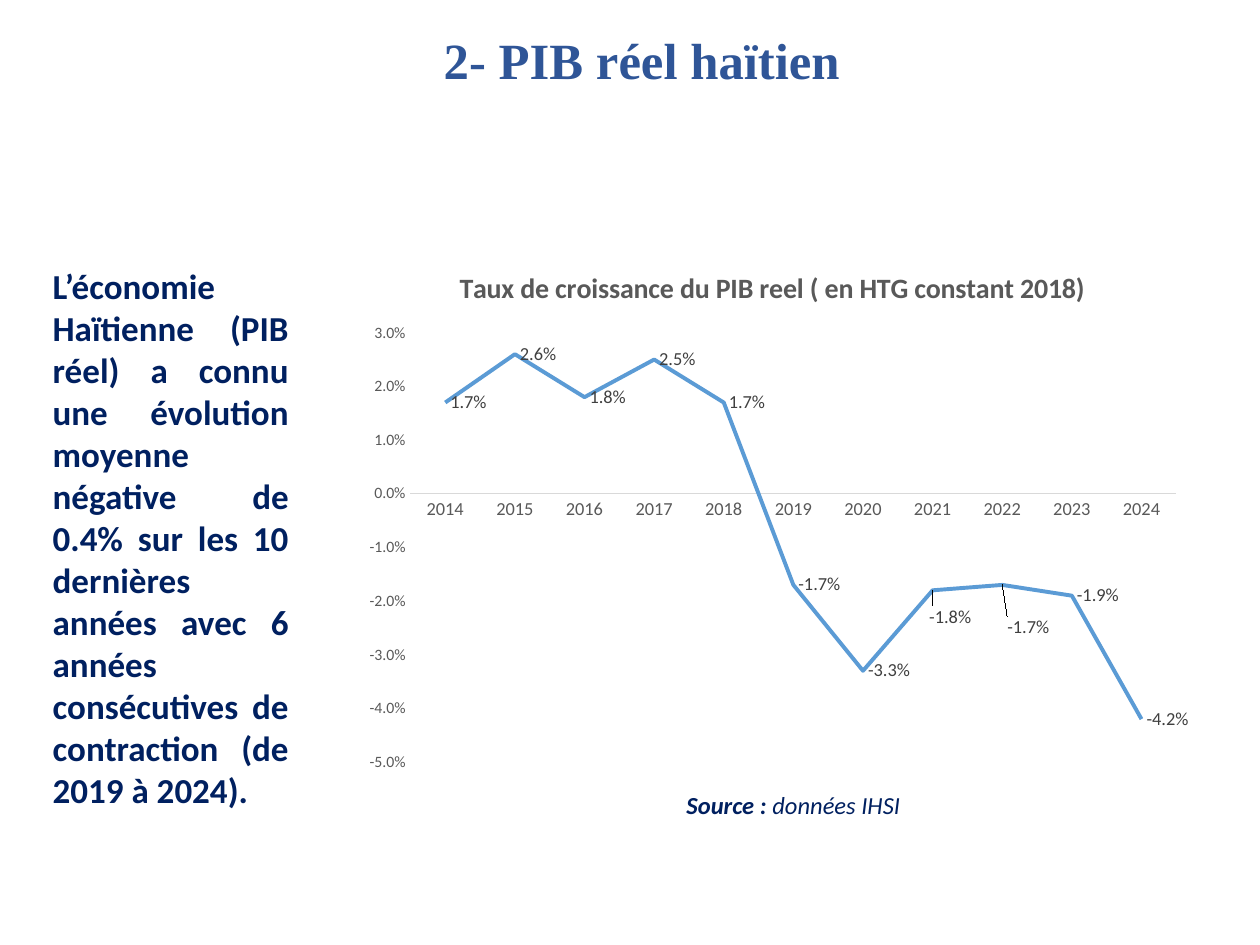
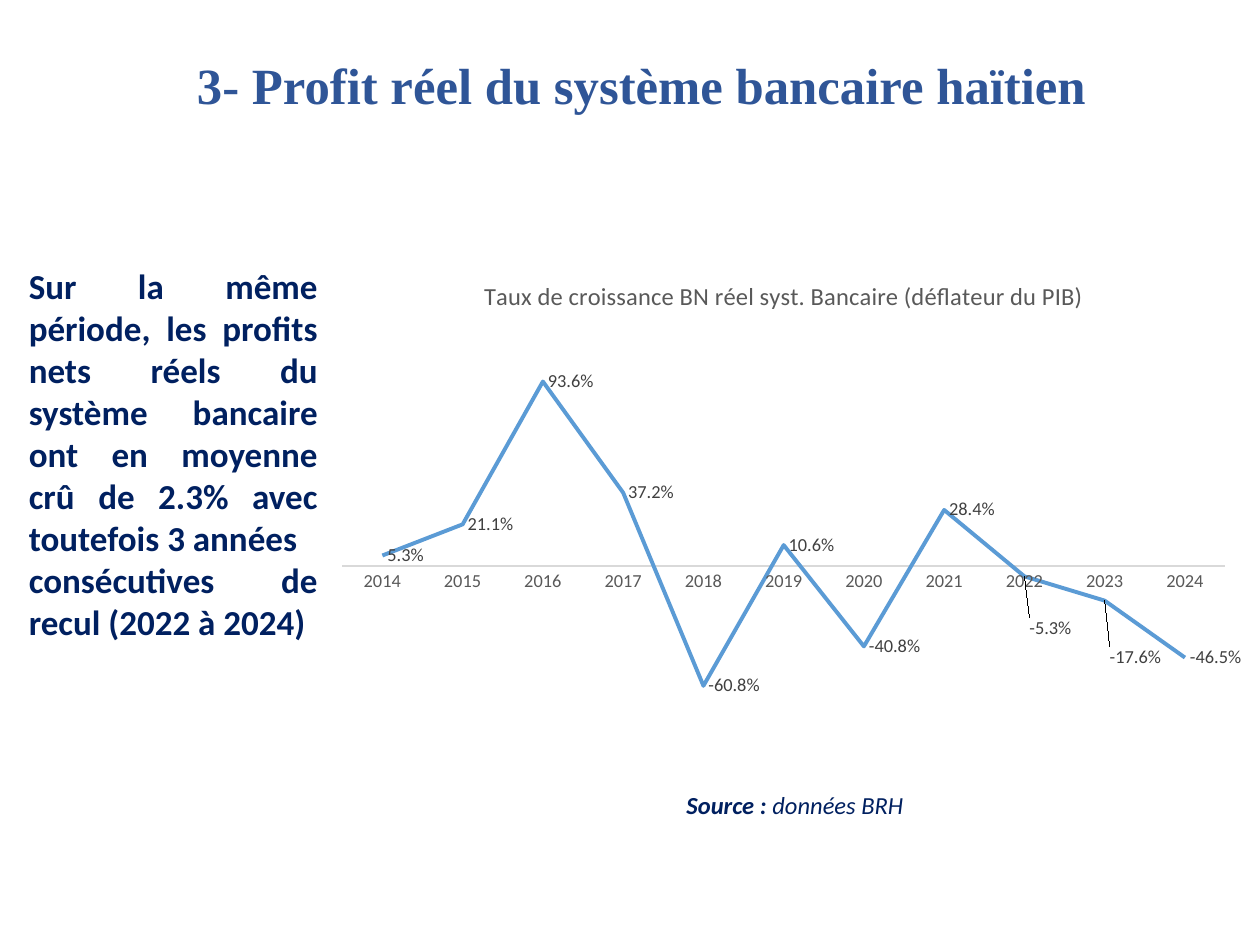
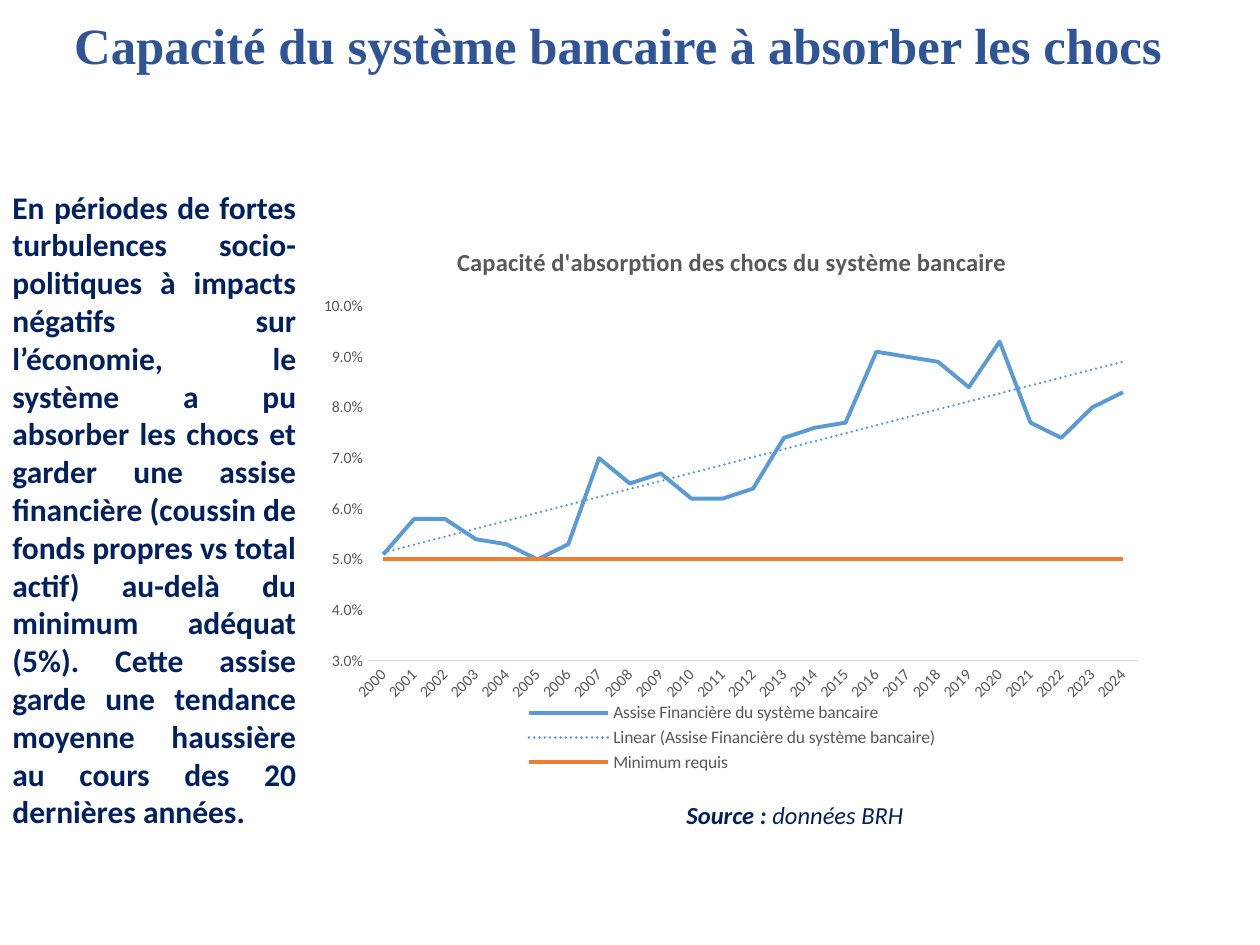
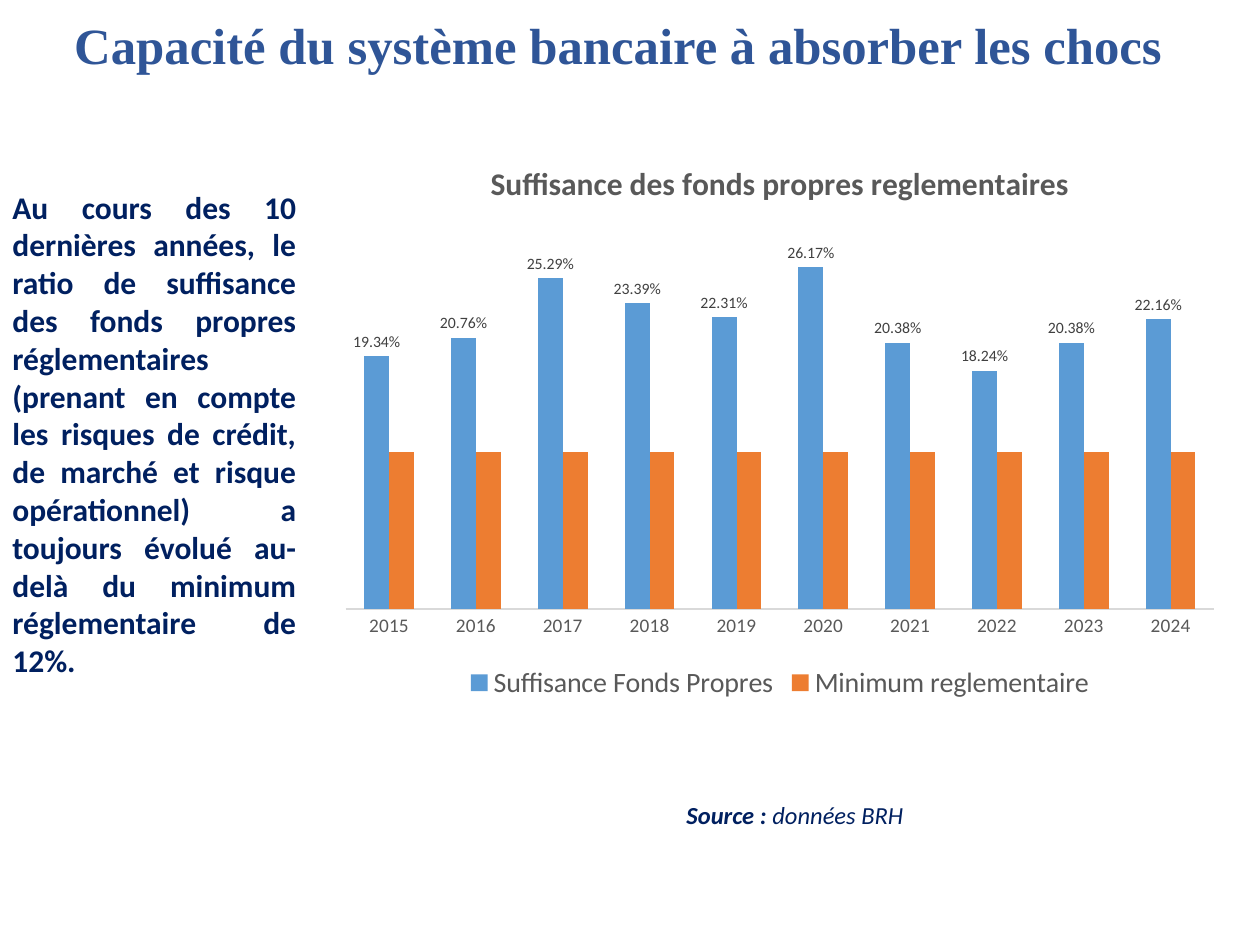
from lxml import etree
from pptx import Presentation
from pptx.chart.data import CategoryChartData
from pptx.dml.color import RGBColor
from pptx.enum.chart import (XL_CHART_TYPE, XL_LABEL_POSITION, XL_LEGEND_POSITION,
                             XL_MARKER_STYLE, XL_TICK_MARK)
from pptx.enum.text import MSO_ANCHOR, PP_ALIGN
from pptx.oxml import parse_xml
from pptx.oxml.ns import nsdecls, qn
from pptx.util import Inches, Pt

LINE, COLUMN = XL_CHART_TYPE.LINE, XL_CHART_TYPE.COLUMN_CLUSTERED
RIGHT, OUTSIDE = XL_LABEL_POSITION.RIGHT, XL_LABEL_POSITION.OUTSIDE_END
LEFT, CENTER, JUSTIFY = PP_ALIGN.LEFT, PP_ALIGN.CENTER, PP_ALIGN.JUSTIFY
NO_TICK = XL_TICK_MARK.NONE

COLORS = {"title": "2F5597", "body": "002060", "chart_text": "595959",
          "label": "404040", "axis": "D9D9D9"}
SERIES_COLORS = ["5B9BD5", "ED7D31"]
TITLE_FONT, BODY_FONT = "Times New Roman", "Calibri"


def years(first, last=2024):
    return [str(year) for year in range(first, last + 1)]


# Content: boxes are left, top, width, height in inches;
# "plot" is the inner plot area as fractions of the chart;
# "moved" gives label offsets (x, y) by point index
SHOCKS_TITLE = {"title": "Capacité du système bancaire à absorber les chocs",
                "title_box": (0.49, 0.04, 9.01, 0.68), "title_align": LEFT,
                "source": "données BRH", "source_top": 6.3, "body_size": 18}
SLIDES = [
    {"title": "2- PIB réel haïtien",
     "title_box": (0.59, 0.31, 9.01, 0.78), "title_align": CENTER, "title_bottom": 0.45,
     "source": "données IHSI", "source_top": 6.22,
     "body": ["L’économie Haïtienne (PIB réel) a connu une évolution moyenne négative "
              "de 0.4% sur les 10 dernières années avec 6 années consécutives de "
              "contraction (de 2019 à 2024)."],
     "body_box": (0.32, 2.05, 2.07, 4.48), "body_size": 20,
     "chart": {
         "type": LINE, "box": (2.79, 1.96, 6.68, 4.26), "plot": (0.07, 0.16, 0.91, 0.8),
         "title": "Taux de croissance du PIB reel ( en HTG constant 2018)",
         "title_size": 16, "title_bold": True, "format": "0.0%", "scale": (-0.05, 0.03, 0.01),
         "show_values": True, "category_size": 10.5, "label_size": 10.5,
         "categories": years(2014),
         "series": [("Series 1", [0.017, 0.026, 0.018, 0.025, 0.017, -0.017, -0.033,
                                  -0.018, -0.017, -0.019, -0.042])],
         "moved": {7: (-0.01, 0.05), 8: (0, 0.08)}}},
    {"title": "3- Profit réel du système bancaire haïtien",
     "title_box": (0.59, 0.31, 9.01, 0.78), "title_align": CENTER,
     "source": "données BRH", "source_top": 6.22,
     "body": ["Sur la même période, les profits nets réels du système bancaire ont en "
              "moyenne crû de 2.3% avec toutefois 3 années",
              "consécutives de recul (2022 à 2024)"],
     "body_box": (0.13, 2.05, 2.49, 3.13), "body_size": 20,
     "chart": {
         "type": LINE, "box": (2.57, 2.05, 7.3, 3.77), "plot": (0.02, 0.15, 0.96, 0.83),
         "title": "Taux de croissance BN réel syst. Bancaire (déflateur du PIB)",
         "title_size": 14, "title_bold": False, "format": "0.0%", "scale": (-0.8, 1.2, 0.2),
         "show_values": False, "category_size": 10.5, "label_size": 10.5,
         "categories": years(2014),
         "series": [("Taux de croissance BN réel syst. Bancaire (déflateur du PIB)",
                     [0.053, 0.211, 0.936, 0.372, -0.608, 0.106, -0.408, 0.284,
                      -0.053, -0.176, -0.465])],
         "moved": {8: (0, 0.11), 9: (0, 0.12)}}},
    {**SHOCKS_TITLE,
     "body": ["En périodes de fortes turbulences socio-politiques à impacts négatifs sur "
              "l’économie, le système a pu absorber les chocs et garder une assise "
              "financière (coussin de fonds propres vs total actif) au-delà du minimum "
              "adéquat (5%). Cette assise garde une tendance moyenne haussière au cours "
              "des 20 dernières années."],
     "body_box": (0, 1.44, 2.45, 5.25),
     "chart": {
         "type": LINE, "box": (2.45, 1.77, 6.72, 4.4), "plot": (0.07, 0.15, 0.91, 0.64),
         "title": "Capacité d'absorption des chocs du système bancaire",
         "title_size": 14, "title_bold": True, "format": "0.0%", "scale": (0.03, 0.1, 0.01),
         "show_values": True, "category_size": 9, "legend_size": 10, "trend": True,
         "categories": years(2000),
         "series": [("Assise Financière du système bancaire",
                     [0.051, 0.058, 0.058, 0.054, 0.053, 0.05, 0.053, 0.07, 0.065, 0.067,
                      0.062, 0.062, 0.064, 0.074, 0.076, 0.077, 0.091, 0.09, 0.089, 0.084,
                      0.093, 0.077, 0.074, 0.08, 0.083]),
                    ("Minimum requis", [0.05] * 25)]}},
    {**SHOCKS_TITLE,
     "body": ["Au cours des 10 dernières années, le ratio de suffisance des fonds propres "
              "réglementaires (prenant en compte les risques de crédit, de marché et "
              "risque opérationnel) a toujours évolué au-delà du minimum réglementaire "
              "de 12%."],
     "body_box": (0, 1.44, 2.45, 4.04),
     "chart": {
         "type": COLUMN, "box": (2.6, 1.09, 7.18, 4.51), "plot": (0.02, 0.14, 0.96, 0.69),
         "title": "Suffisance des fonds propres reglementaires",
         "title_size": 18, "title_bold": True, "format": "0.00%", "scale": (0, 0.3, 0.05),
         "show_values": False, "category_size": 11, "label_size": 9, "legend_size": 16,
         "categories": years(2015),
         "series": [("Suffisance Fonds Propres",
                     [0.1934, 0.2076, 0.2529, 0.2339, 0.2231, 0.2617, 0.2038, 0.1824,
                      0.2038, 0.2216]),
                    ("Minimum reglementaire", [0.12] * 10)]}},
]


def style(font, size, color, bold=False, italic=False, name=BODY_FONT):
    font.name, font.size, font.bold, font.italic = name, Pt(size), bold, italic
    font.color.rgb = RGBColor.from_string(color)


def add_text(slide, box, paragraphs, align):
    """Add a wrapped text box; each paragraph is a list of run texts."""
    frame = slide.shapes.add_textbox(*map(Inches, box)).text_frame
    frame.word_wrap = True
    for index, texts in enumerate(paragraphs):
        paragraph = frame.add_paragraph() if index else frame.paragraphs[0]
        paragraph.alignment = align
        for text in texts:
            paragraph.add_run().text = text
    return frame


def add_title(slide, content):
    frame = add_text(slide, content["title_box"], [[content["title"]]], content["title_align"])
    frame.vertical_anchor = MSO_ANCHOR.MIDDLE
    frame.margin_bottom = Inches(content.get("title_bottom", 0.05))
    title = frame.paragraphs[0]
    title.line_spacing = 0.9
    style(title.runs[0].font, 29, COLORS["title"], bold=True, name=TITLE_FONT)


def add_body(slide, content):
    frame = add_text(slide, content["body_box"], [[text] for text in content["body"]], JUSTIFY)
    for paragraph in frame.paragraphs:
        style(paragraph.runs[0].font, content["body_size"], COLORS["body"], bold=True)


def add_source(slide, content):
    box = (5.35, content["source_top"], 3.64, 0.34)
    frame = add_text(slide, box, [["Source : ", content["source"]]], LEFT)
    for run, bold in zip(frame.paragraphs[0].runs, (True, False)):
        style(run.font, 14, COLORS["body"], bold=bold, italic=True)


# Chart parts that need XML
def manual_layout(settings):
    values = "".join(f'<c:{tag} val="{value}"/>' for tag, value in settings)
    return parse_xml(f'<c:layout {nsdecls("c")}><c:manualLayout>{values}'
                     '</c:manualLayout></c:layout>')


def place_plot(chart, plot_box):
    area = chart.plots[0]._element.getparent()
    for layout in area.findall(qn("c:layout")):
        area.remove(layout)
    area.insert(0, manual_layout([("layoutTarget", "inner"), ("xMode", "edge"),
                                  ("yMode", "edge"), *zip("xywh", plot_box)]))


def move_label(series, index, offset, size):
    label = series.points[index].data_label
    style(label.font, size, COLORS["label"])
    label.position = RIGHT
    for idx in series._element.iter(qn("c:idx")):
        if idx.getparent().tag == qn("c:dLbl") and idx.get("val") == str(index):
            idx.addnext(manual_layout(zip("xy", offset)))


def add_trend(series, color):
    trend = parse_xml(
        f'<c:trendline {nsdecls("c", "a")}><c:spPr><a:ln w="{Pt(1.5)}" cap="rnd"><a:solidFill>'
        f'<a:srgbClr val="{color}"/></a:solidFill><a:prstDash val="sysDot"/></a:ln></c:spPr>'
        '<c:trendlineType val="linear"/></c:trendline>')
    for tag in ("c:dispRSqr", "c:dispEq"):
        etree.SubElement(trend, qn(tag)).set("val", "0")
    series._element.find(qn("c:cat")).addprevious(trend)


def style_axes(chart, content):
    years_axis, value_axis = chart.category_axis, chart.value_axis
    for axis in (years_axis, value_axis):
        axis.major_tick_mark = axis.minor_tick_mark = NO_TICK
        axis.has_major_gridlines = False
    style(years_axis.tick_labels.font, content["category_size"], COLORS["chart_text"])
    years_axis.format.line.color.rgb = RGBColor.from_string(COLORS["axis"])
    years_axis.format.line.width = Pt(0.75)
    value_axis.minimum_scale, value_axis.maximum_scale, value_axis.major_unit = content["scale"]
    value_axis.visible = content["show_values"]
    value_axis.format.line.fill.background()
    value_axis.tick_labels.number_format = content["format"]
    value_axis.tick_labels.number_format_is_linked = False
    style(value_axis.tick_labels.font, 9, COLORS["chart_text"])


def style_series(plot, content):
    for series, color in zip(plot.series, SERIES_COLORS):
        if content["type"] == LINE:
            series.smooth = False
            series.marker.style = XL_MARKER_STYLE.NONE
            series.format.line.color.rgb = RGBColor.from_string(color)
            series.format.line.width = Pt(2.25)
        else:
            series.format.fill.solid()
            series.format.fill.fore_color.rgb = RGBColor.from_string(color)
    main = plot.series[0]
    if "label_size" in content:
        labels = main.data_labels
        labels.show_value = True
        labels.number_format, labels.number_format_is_linked = content["format"], False
        labels.position = RIGHT if content["type"] == LINE else OUTSIDE
        style(labels.font, content["label_size"], COLORS["label"])
    for index, offset in content.get("moved", {}).items():
        move_label(main, index, offset, content["label_size"])
    if content.get("trend"):
        add_trend(main, SERIES_COLORS[0])


def add_chart(slide, content):
    data = CategoryChartData(number_format=content["format"])
    data.categories = content["categories"]
    for name, values in content["series"]:
        data.add_series(name, values)
    chart = slide.shapes.add_chart(content["type"], *map(Inches, content["box"]), data).chart
    style(chart.font, 10, "000000")
    title = chart.chart_title.text_frame
    title.text = content["title"]
    style(title.paragraphs[0].runs[0].font, content["title_size"], COLORS["chart_text"],
          bold=content["title_bold"])
    chart.has_legend = "legend_size" in content
    if chart.has_legend:
        chart.legend.position = XL_LEGEND_POSITION.BOTTOM
        chart.legend.include_in_layout = False
        style(chart.legend.font, content["legend_size"], COLORS["chart_text"])
    plot = chart.plots[0]
    plot.vary_by_categories = False
    if content["type"] == COLUMN:
        plot.gap_width, plot.overlap = 150, 0
    style_axes(chart, content)
    style_series(plot, content)
    place_plot(chart, content["plot"])


def main():
    deck = Presentation()
    deck.slide_width, deck.slide_height = Inches(10), Inches(7.5)
    for content in SLIDES:
        slide = deck.slides.add_slide(deck.slide_layouts[6])
        add_title(slide, content)
        add_source(slide, content)
        add_body(slide, content)
        add_chart(slide, content["chart"])
    deck.save("out.pptx")


if __name__ == "__main__":
    main()
